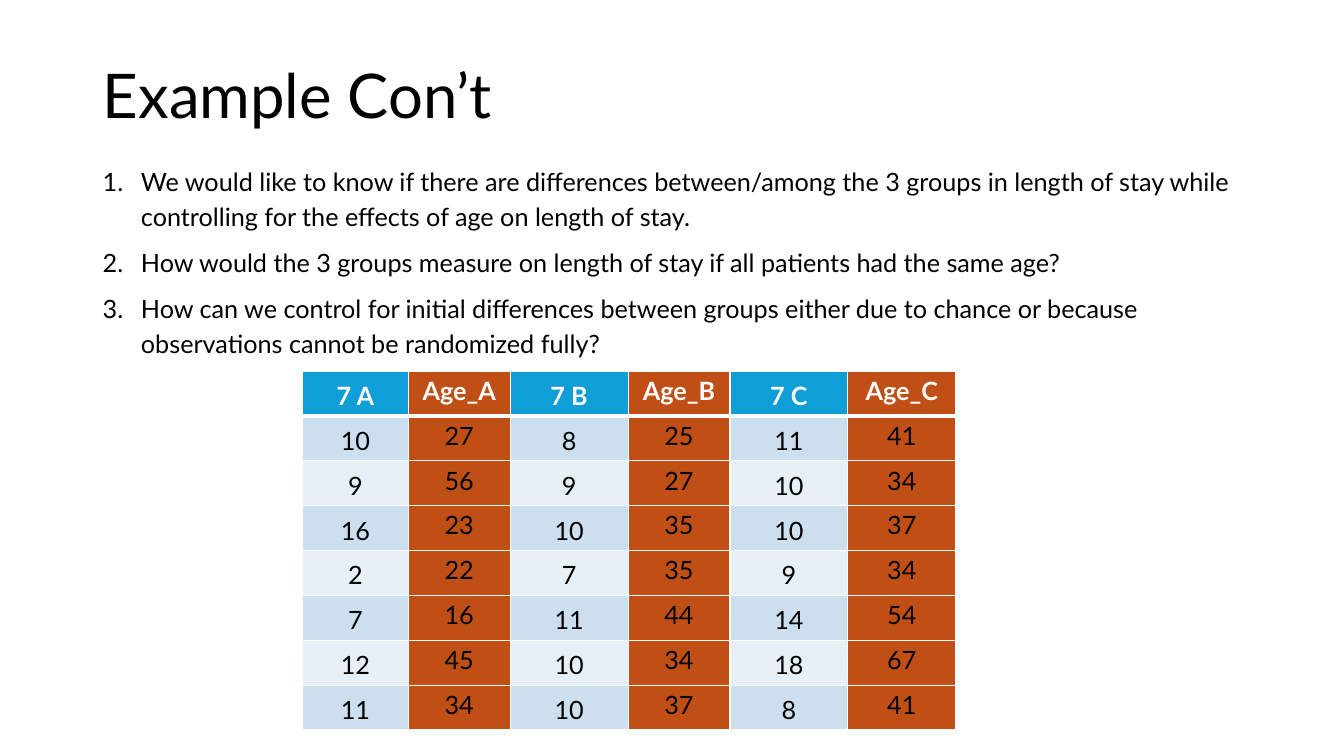
from dataclasses import dataclass

from lxml import etree
from pptx import Presentation
from pptx.dml.color import RGBColor
from pptx.enum.text import MSO_ANCHOR, MSO_AUTO_SIZE, PP_ALIGN
from pptx.oxml.ns import qn
from pptx.util import Emu, Pt

LEFT, CENTER = PP_ALIGN.LEFT, PP_ALIGN.CENTER
TOP, MIDDLE = MSO_ANCHOR.TOP, MSO_ANCHOR.MIDDLE
NO_AUTOFIT = MSO_AUTO_SIZE.NONE

EMU_PER_PX = 9144  # 100 px to the inch
TITLE_ONLY = 5
FONT = "Lato"
COLORS = {
    "text": "000000",
    "white": "FFFFFF",
    "header": "0F9ED5",
    "age": "C04F15",
    "odd_row": "CCDFEF",
    "even_row": "E7F0F7",
}
ROW_HEIGHT = 41
NUMBER_INDENT = 38

TITLE = "Example Con’t"
QUESTIONS = [
    "We would like to know if there are differences between/among the 3 groups in "
    "length of stay while controlling for the effects of age on length of stay.",
    "How would the 3 groups measure on length of stay if all patients had the same age?",
    "How can we control for initial differences between groups either due to chance "
    "or because observations cannot be randomized fully?",
]


@dataclass(frozen=True)
class Column:
    header: str
    width: int
    values: tuple[int, ...]
    is_age: bool = False


COLUMNS = [
    Column("7 A", 105, (10, 9, 16, 2, 7, 12, 11)),
    Column("Age_A", 101, (27, 56, 23, 22, 16, 45, 34), is_age=True),
    Column("7 B", 117, (8, 9, 10, 7, 11, 10, 10)),
    Column("Age_B", 101, (25, 27, 35, 35, 44, 34, 37), is_age=True),
    Column("7 C", 117, (11, 10, 10, 9, 14, 18, 8)),
    Column("Age_C", 107, (41, 34, 37, 34, 54, 67, 41), is_age=True),
]


def px(length: int) -> Emu:
    return Emu(length * EMU_PER_PX)


def rgb(name: str) -> RGBColor:
    return RGBColor.from_string(COLORS[name])


def write(paragraph, text: str, *, size: int = 18, color: str = "text", bold: bool = False,
          align=LEFT, line_spacing: float = 1.15, space_after: int = 0) -> None:
    paragraph.alignment = align
    paragraph.line_spacing = line_spacing
    paragraph.space_before = Pt(0)
    paragraph.space_after = Pt(space_after)
    run = paragraph.add_run()
    run.text = text
    run.font.name = FONT
    run.font.size = Pt(size)
    run.font.bold = bold
    run.font.color.rgb = rgb(color)


def number(paragraph) -> None:
    """Give a paragraph an automatic number with a hanging indent."""
    properties = paragraph._p.get_or_add_pPr()
    properties.set("marL", str(px(NUMBER_INDENT)))
    properties.set("indent", str(-px(NUMBER_INDENT)))
    etree.SubElement(properties, qn("a:buFont"), typeface="+mj-lt")
    etree.SubElement(properties, qn("a:buAutoNum"), type="arabicPeriod")


def set_borders(cell, *, top: int = 1, bottom: int = 1) -> None:
    properties = cell._tc.get_or_add_tcPr()
    for side, width in (("L", 1), ("R", 1), ("T", top), ("B", bottom)):
        line = etree.SubElement(properties, qn(f"a:ln{side}"), w=str(Pt(width)))
        fill = etree.SubElement(line, qn("a:solidFill"))
        etree.SubElement(fill, qn("a:srgbClr"), val=COLORS["white"])


def add_title(slide) -> None:
    title = slide.shapes.title
    title.left, title.top, title.width, title.height = map(px, (92, 40, 1150, 116))
    frame = title.text_frame
    frame.auto_size = NO_AUTOFIT
    frame.vertical_anchor = MIDDLE
    write(frame.paragraphs[0], TITLE, size=44, line_spacing=0.9)


def add_questions(slide) -> None:
    frame = slide.shapes.add_textbox(*map(px, (92, 156, 1150, 510))).text_frame
    frame.word_wrap = True
    for index, question in enumerate(QUESTIONS):
        paragraph = frame.add_paragraph() if index else frame.paragraphs[0]
        write(paragraph, question, space_after=8)
        number(paragraph)


def fill_name(column: Column, row: int) -> str:
    if column.is_age:
        return "age"
    if row == 0:
        return "header"
    return "odd_row" if row % 2 else "even_row"


def add_data_table(slide) -> None:
    row_count = len(COLUMNS[0].values) + 1
    width = sum(column.width for column in COLUMNS)
    table = slide.shapes.add_table(
        row_count, len(COLUMNS), px(300), px(368), px(width), px(ROW_HEIGHT * row_count)
    ).table
    for column_index, column in enumerate(COLUMNS):
        table.columns[column_index].width = px(column.width)
        for row, value in enumerate((column.header, *column.values)):
            is_header = row == 0
            cell = table.cell(row, column_index)
            set_borders(cell, top=3 if row == 1 else 1, bottom=3 if is_header else 1)
            cell.fill.solid()
            cell.fill.fore_color.rgb = rgb(fill_name(column, row))
            cell.vertical_anchor = TOP
            if column.is_age:
                cell.margin_left = cell.margin_right = px(0)
                cell.margin_top = cell.margin_bottom = px(0)
            write(cell.text_frame.paragraphs[0], str(value), align=CENTER,
                  bold=is_header, color="white" if is_header else "text")


def main() -> None:
    presentation = Presentation()
    presentation.slide_width, presentation.slide_height = px(1333), px(750)
    slide = presentation.slides.add_slide(presentation.slide_layouts[TITLE_ONLY])
    add_title(slide)
    add_questions(slide)
    add_data_table(slide)
    presentation.save("out.pptx")


if __name__ == "__main__":
    main()
